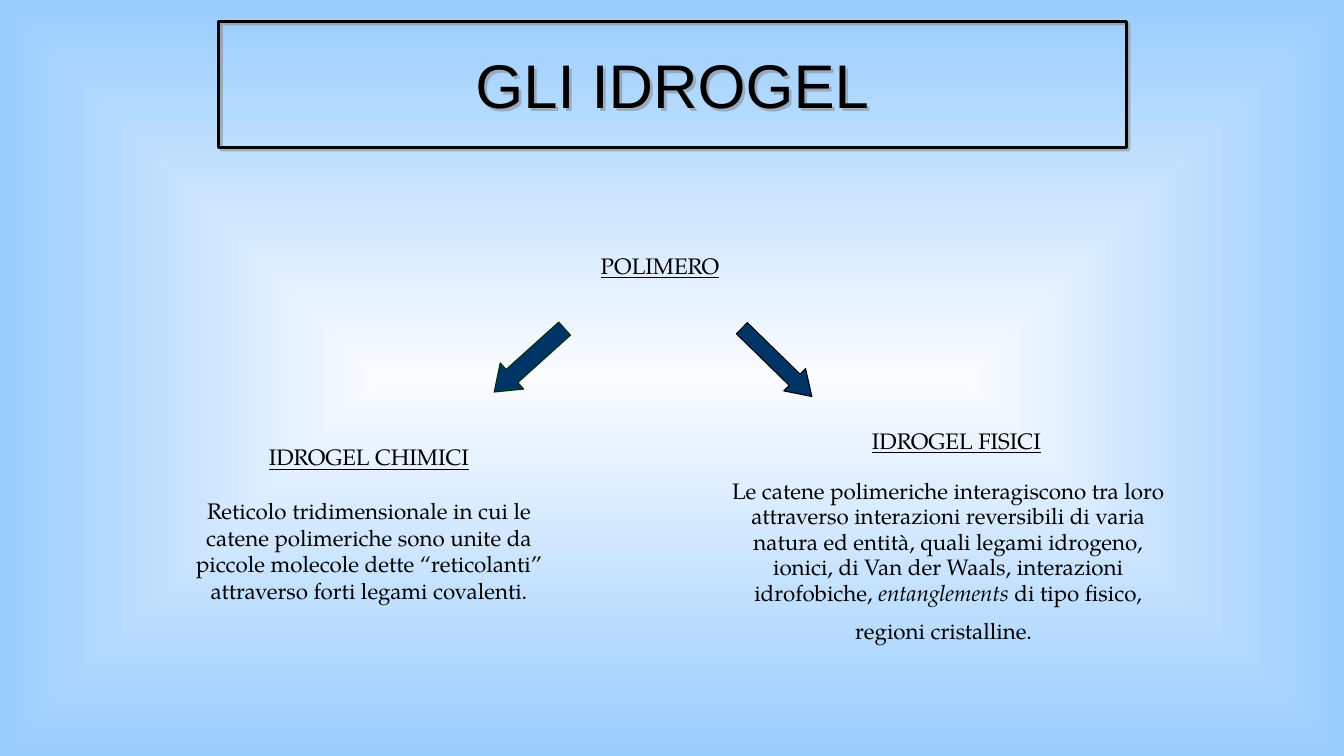
from lxml import etree
from pptx import Presentation
from pptx.dml.color import RGBColor
from pptx.enum.shapes import MSO_SHAPE as SHAPE
from pptx.enum.text import MSO_ANCHOR as ANCHOR, MSO_AUTO_SIZE as AUTO_SIZE, PP_ALIGN as ALIGN
from pptx.oxml import parse_xml
from pptx.oxml.ns import nsdecls, qn
from pptx.util import Inches, Pt

COLORS = {
    "black": "000000",
    "navy": "003366",
    "green": "003300",
    "shadow": "808080",
    "centre": "FAFCFF",
    "edge": "99CCFF",
}
BODY_FONT = "TeX Gyre Pagella"


def rgb(name):
    return RGBColor.from_string(COLORS[name])


def set_background(slide):
    slide.background.fill.solid()
    properties = slide.background.fill._xPr
    gradient = parse_xml(
        f'<a:gradFill rotWithShape="0" {nsdecls("a")}><a:gsLst>'
        f'<a:gs pos="0"><a:srgbClr val="{COLORS["centre"]}"/></a:gs>'
        f'<a:gs pos="100000"><a:srgbClr val="{COLORS["edge"]}"/></a:gs></a:gsLst>'
        '<a:path path="shape"><a:fillToRect l="50000" t="50000" r="50000" b="50000"/></a:path>'
        '</a:gradFill>')
    properties.replace(properties.find(qn("a:solidFill")), gradient)


def style_run(run, size=16, font=BODY_FONT, underline=False, italic=False):
    run.font.size = Pt(size)
    run.font.name = font
    run.font.color.rgb = rgb("black")
    run.font.underline = underline
    run.font.italic = italic


def add_title(slide, text, left, top, width, height):
    title = slide.shapes.add_shape(
        SHAPE.RECTANGLE, Inches(left), Inches(top), Inches(width), Inches(height))
    title.fill.background()
    title.line.color.rgb = rgb("black")
    title.line.width = Pt(2)
    # Soft grey offset shadow, also cast by the letters
    title.shadow.inherit = False
    effects = title._element.spPr.find(qn("a:effectLst"))
    shadow = etree.SubElement(effects, qn("a:outerShdw"), dist=str(Pt(2.8)),
                              dir="2700000", algn="ctr", rotWithShape="0")
    tint = etree.SubElement(shadow, qn("a:srgbClr"), val=COLORS["shadow"])
    etree.SubElement(tint, qn("a:alpha"), val="50000")
    frame = title.text_frame
    frame.text = text
    frame.vertical_anchor = ANCHOR.MIDDLE
    frame.paragraphs[0].alignment = ALIGN.CENTER
    style_run(frame.paragraphs[0].runs[0], 44, "Arial")


def add_heading_box(slide, heading, left, top, width, height, wrap=True):
    box = slide.shapes.add_textbox(Inches(left), Inches(top), Inches(width), Inches(height))
    frame = box.text_frame
    frame.text = heading
    frame.word_wrap = wrap
    frame.auto_size = AUTO_SIZE.SHAPE_TO_FIT_TEXT
    style_run(frame.paragraphs[0].runs[0], underline=True)
    return frame


def add_description(frame, pieces, gap, line_spacing=1.0):
    """Each piece is a text with the run styles that apply to it."""
    description = frame.add_paragraph()
    description.alignment = ALIGN.CENTER
    description.space_before = Pt(gap)
    description.line_spacing = line_spacing
    for text, styles in pieces:
        run = description.add_run()
        run.text = text
        style_run(run, **styles)


def add_arrow(slide, preset, left, top, width, height, rotation, head, outline):
    arrow = slide.shapes.add_shape(
        preset, Inches(left), Inches(top), Inches(width), Inches(height))
    arrow.rotation = rotation
    arrow.adjustments[0] = 0.5
    arrow.adjustments[1] = head
    arrow.shadow.inherit = False
    arrow.fill.solid()
    arrow.fill.fore_color.rgb = rgb("navy")
    arrow.line.color.rgb = rgb(outline)
    arrow.line.width = Pt(0.75)


def main():
    deck = Presentation()
    deck.slide_width, deck.slide_height = Inches(13.33), Inches(7.5)
    slide = deck.slides.add_slide(deck.slide_layouts[6])
    set_background(slide)

    # Chemical hydrogels
    chemical = add_heading_box(slide, "IDROGEL CHIMICI", 1.75, 4.35, 3.82, 1.7)
    chemical.paragraphs[0].alignment = ALIGN.CENTER
    add_description(chemical, [
        ("Reticolo tridimensionale in cui le catene polimeriche sono unite da piccole "
         "molecole dette “reticolanti” attraverso forti legami covalenti.", {}),
    ], gap=19)

    # Physical hydrogels
    physical = add_heading_box(slide, "IDROGEL FISICI", 7.06, 4.18, 4.69, 2.3)
    physical.vertical_anchor = ANCHOR.MIDDLE
    physical.paragraphs[0]._p.get_or_add_pPr().set("marL", str(Inches(1.49)))
    add_description(physical, [
        ("Le catene polimeriche interagiscono tra loro attraverso interazioni reversibili "
         "di varia natura ed entità, quali legami idrogeno, ionici, di Van der Waals, "
         "interazioni idrofobiche, ", {}),
        ("entanglements", {"italic": True}),
        (" di tipo fisico, regioni cristalline.", {}),
        (" ", {"size": 26}),
    ], gap=18, line_spacing=0.95)

    # Arrows from the polymer to its two families
    add_arrow(slide, SHAPE.RIGHT_ARROW, 4.78, 3.4, 0.94, 0.35, 138, 0.68, "green")
    add_arrow(slide, SHAPE.LEFT_ARROW, 7.22, 3.44, 0.97, 0.31, 224.3, 0.77, "black")

    # Title and polymer
    add_title(slide, "GLI IDROGEL", 2.17, 0.21, 9, 1.25)
    add_heading_box(slide, "POLIMERO", 5.86, 2.45, 1.39, 0.37, wrap=False)

    deck.save("out.pptx")


if __name__ == "__main__":
    main()
